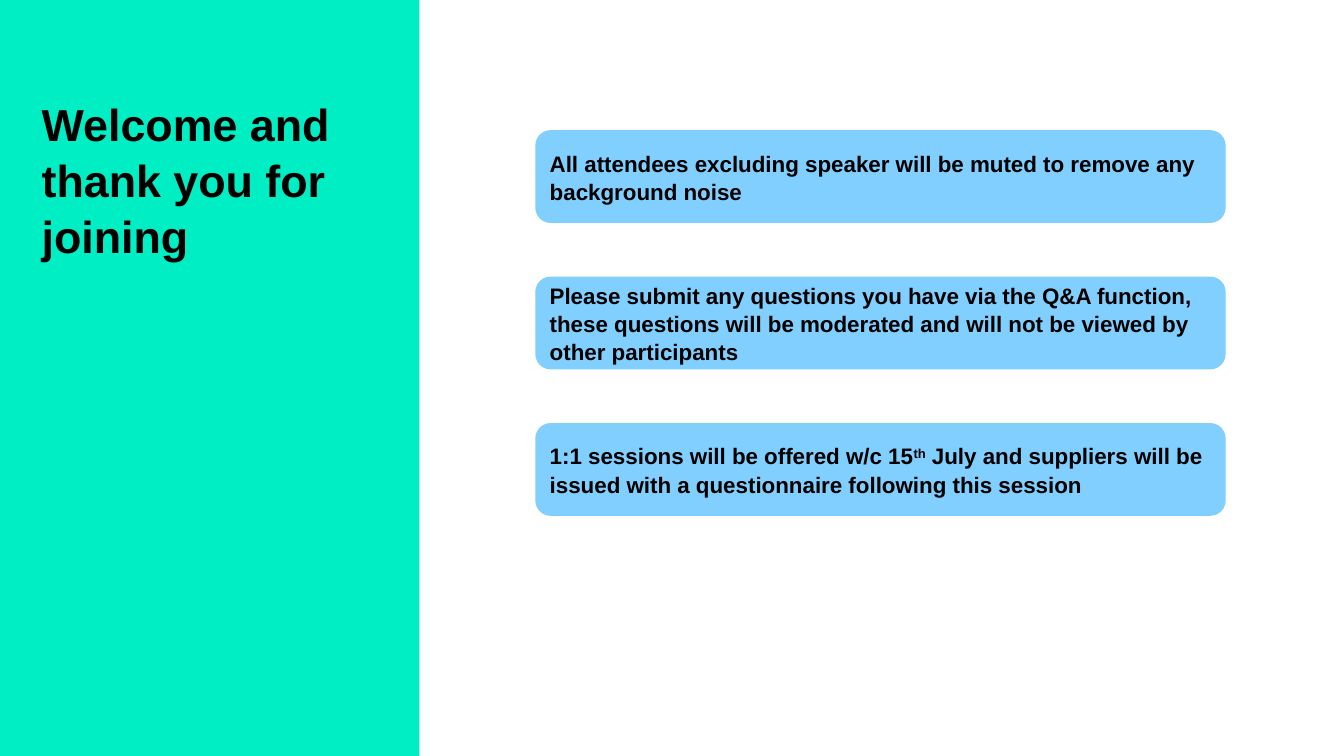
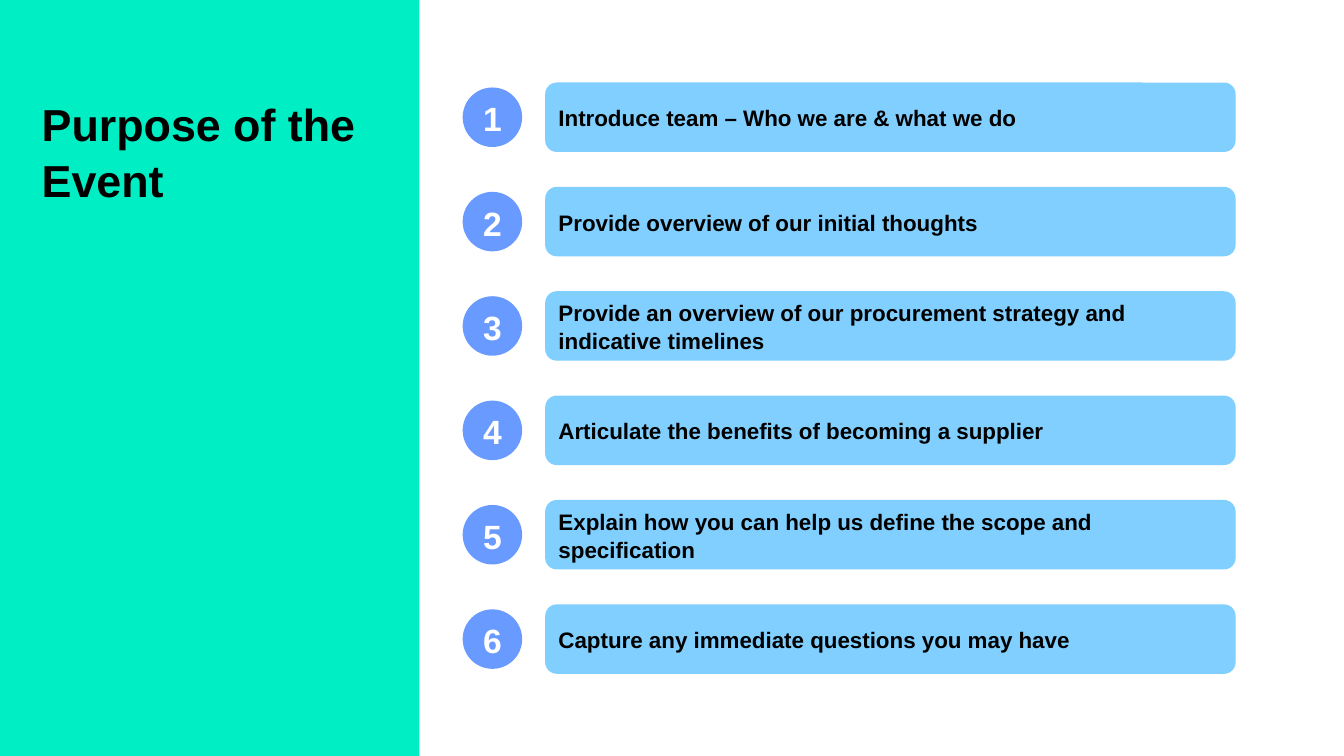
from dataclasses import dataclass

from pptx import Presentation
from pptx.dml.color import RGBColor
from pptx.enum.shapes import MSO_SHAPE
from pptx.enum.text import MSO_ANCHOR, MSO_AUTO_SIZE, PP_ALIGN
from pptx.presentation import Presentation as Deck
from pptx.shapes.autoshape import Shape
from pptx.slide import Slide, SlideLayout
from pptx.text.text import TextFrame
from pptx.util import Cm, Length, Pt

RECTANGLE = MSO_SHAPE.RECTANGLE
ROUNDED = MSO_SHAPE.ROUNDED_RECTANGLE
OVAL = MSO_SHAPE.OVAL
TOP, MIDDLE = MSO_ANCHOR.TOP, MSO_ANCHOR.MIDDLE
LEFT, CENTER = PP_ALIGN.LEFT, PP_ALIGN.CENTER
FIXED = MSO_AUTO_SIZE.NONE
TITLE_ONLY = 5
RAISED_MARK = "^"


@dataclass(frozen=True)
class Theme:
    font: str = "Arial"
    band: RGBColor = RGBColor(0x00, 0xEE, 0xC4)
    bar: RGBColor = RGBColor(0x80, 0xCF, 0xFF)
    badge: RGBColor = RGBColor(0x69, 0x9A, 0xFF)
    dark: RGBColor = RGBColor(0x00, 0x00, 0x00)
    light: RGBColor = RGBColor(0xFF, 0xFF, 0xFF)
    title_size: Length = Pt(32)
    badge_size: Length = Pt(24)
    bar_size: Length = Pt(16)
    line_spacing: float = 1.05


@dataclass(frozen=True)
class Box:
    left: Length
    top: Length
    width: Length
    height: Length


@dataclass(frozen=True)
class BarStack:
    title: str
    first: Box
    pitch: Length
    messages: tuple[str, ...]
    numbered: bool = False


THEME = Theme()
TITLE_BOX = Box(Cm(1.05), Cm(2.36), Cm(8.48), Cm(2.34))
BAND_WIDTH = Cm(10.57)
BADGE_LEFT = Cm(11.66)
BADGE_DIAMETER = Cm(1.5)

PAGES = (
    BarStack(
        "Welcome and thank you for joining",
        Box(Cm(13.49), Cm(3.28), Cm(17.4), Cm(2.34)),
        Cm(3.69),
        (
            "All attendees excluding speaker will be muted to remove any background noise",
            "Please submit any questions you have via the Q&A function, these questions "
            "will be moderated and will not be viewed by other participants",
            "1:1 sessions will be offered w/c 15^th^ July and suppliers will be issued "
            "with a questionnaire following this session",
        ),
    ),
    BarStack(
        "Purpose of the Event",
        Box(Cm(13.74), Cm(2.08), Cm(17.4), Cm(1.75)),
        Cm(2.63),
        (
            "Introduce team – Who we are & what we do",
            "Provide overview of our initial thoughts",
            "Provide an overview of our procurement strategy and indicative timelines",
            "Articulate the benefits of becoming a supplier",
            "Explain how you can help us define the scope and specification",
            "Capture any immediate questions you may have",
        ),
        numbered=True,
    ),
)


def write_text(
    frame: TextFrame,
    text: str,
    *,
    size: Length,
    color: RGBColor = THEME.dark,
    align: PP_ALIGN = LEFT,
    anchor: MSO_ANCHOR = MIDDLE,
) -> None:
    frame.word_wrap = True
    frame.auto_size = FIXED
    frame.vertical_anchor = anchor
    para = frame.paragraphs[0]
    para.alignment = align
    para.line_spacing = THEME.line_spacing
    for index, part in enumerate(text.split(RAISED_MARK)):
        span = para.add_run()
        span.text = part
        span.font.name = THEME.font
        span.font.size = size
        span.font.bold = True
        span.font.color.rgb = color
        if index % 2:
            span._r.get_or_add_rPr().set("baseline", "30000")


def add_panel(page: Slide, kind: MSO_SHAPE, box: Box, fill: RGBColor) -> Shape:
    panel = page.shapes.add_shape(kind, box.left, box.top, box.width, box.height)
    panel.shadow.inherit = False
    panel.fill.solid()
    panel.fill.fore_color.rgb = fill
    panel.line.fill.background()
    return panel


def add_title(page: Slide, text: str) -> None:
    title = page.shapes.title
    title.left, title.top = TITLE_BOX.left, TITLE_BOX.top
    title.width, title.height = TITLE_BOX.width, TITLE_BOX.height
    frame = title.text_frame
    frame.margin_left = frame.margin_right = Cm(0)
    frame.margin_top = frame.margin_bottom = Cm(0)
    write_text(frame, text, size=THEME.title_size, anchor=TOP)


def add_badge(page: Slide, number: int, bar: Box) -> None:
    top = bar.top + (bar.height - BADGE_DIAMETER) // 2
    box = Box(BADGE_LEFT, top, BADGE_DIAMETER, BADGE_DIAMETER)
    badge = add_panel(page, OVAL, box, THEME.badge)
    write_text(badge.text_frame, str(number), size=THEME.badge_size,
               color=THEME.light, align=CENTER)


def add_bars(page: Slide, stack: BarStack) -> None:
    first = stack.first
    for index, message in enumerate(stack.messages):
        box = Box(first.left, first.top + index * stack.pitch, first.width, first.height)
        bar = add_panel(page, ROUNDED, box, THEME.bar)
        write_text(bar.text_frame, message, size=THEME.bar_size)
        if stack.numbered:
            add_badge(page, index + 1, box)


def move_band_to_layout(deck: Deck, page: Slide, layout: SlideLayout) -> None:
    box = Box(Cm(0), Cm(0), BAND_WIDTH, deck.slide_height)
    band = add_panel(page, RECTANGLE, box, THEME.band)
    layout.shapes.element.insert(2, band.element)


def main() -> None:
    deck = Presentation()
    deck.slide_width, deck.slide_height = Cm(33.87), Cm(19.05)
    layout = deck.slide_layouts[TITLE_ONLY]
    for index, stack in enumerate(PAGES):
        page = deck.slides.add_slide(layout)
        if index == 0:
            move_band_to_layout(deck, page, layout)
        add_title(page, stack.title)
        add_bars(page, stack)
    deck.save("out.pptx")


if __name__ == "__main__":
    main()
